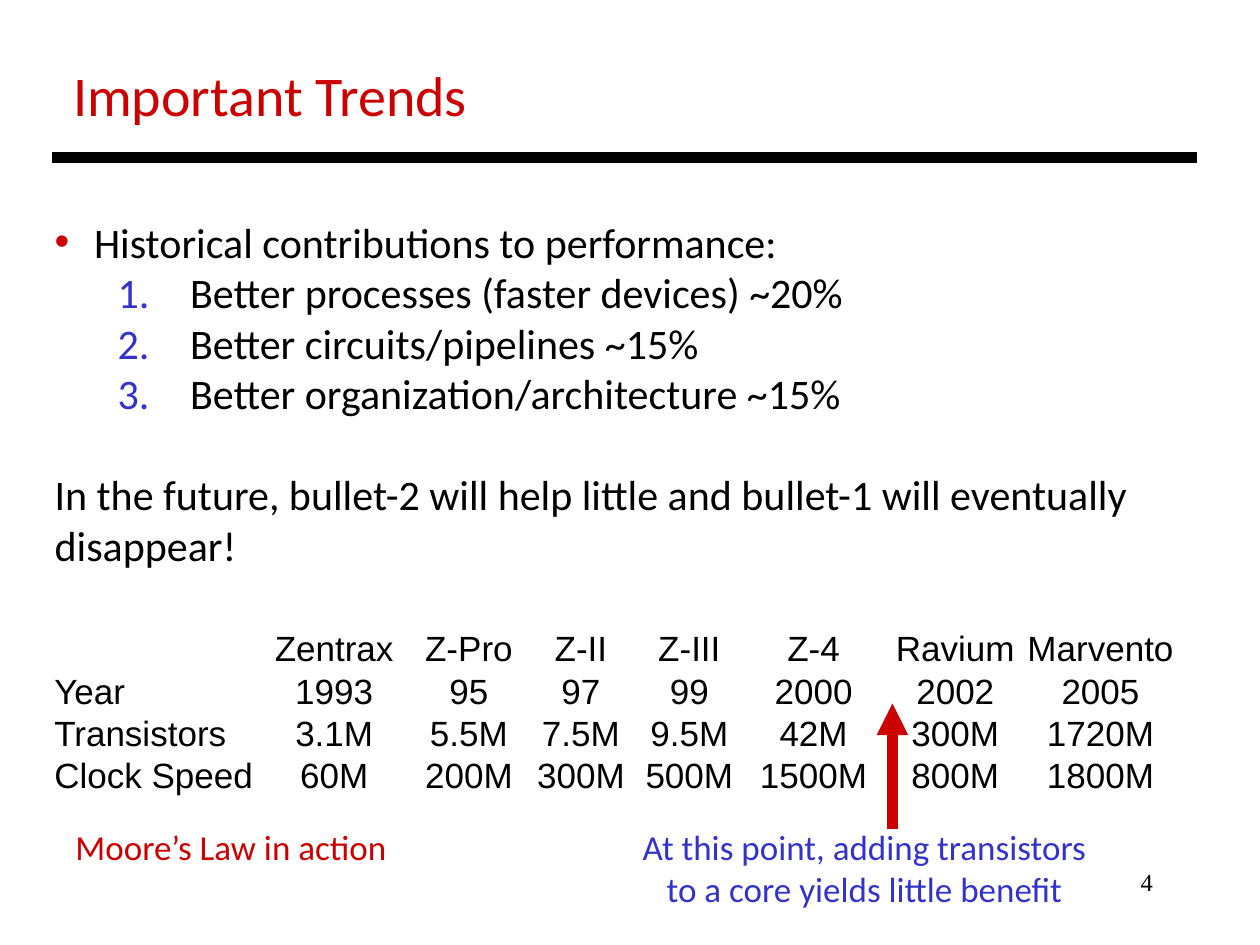
from itertools import pairwise

from lxml import etree
from pptx import Presentation
from pptx.dml.color import RGBColor
from pptx.enum.shapes import MSO_CONNECTOR
from pptx.enum.text import MSO_ANCHOR, MSO_AUTO_SIZE, PP_ALIGN
from pptx.oxml.ns import qn
from pptx.util import Pt

LEFT, CENTER, RIGHT = PP_ALIGN.LEFT, PP_ALIGN.CENTER, PP_ALIGN.RIGHT
TOP, STRAIGHT = MSO_ANCHOR.TOP, MSO_CONNECTOR.STRAIGHT
BLACK = RGBColor(0x00, 0x00, 0x00)
RED = RGBColor(0xCC, 0x00, 0x00)
BLUE = RGBColor(0x33, 0x33, 0xCC)

TITLE = "Important Trends"
HEADING = "Historical contributions to performance:"
CONTRIBUTIONS = [
    "Better processes (faster devices) ~20%",
    "Better circuits/pipelines ~15%",
    "Better organization/architecture ~15%",
]
OUTLOOK = ("In the future, bullet-2 will help little and bullet-1 "
           "will eventually disappear!")
PROCESSORS = [
    ["", "Zentrax", "Z-Pro", "Z-II", "Z-III", "Z-4", "Ravium", "Marvento"],
    ["Year", "1993", "95", "97", "99", "2000", "2002", "2005"],
    ["Transistors", "3.1M", "5.5M", "7.5M", "9.5M", "42M", "300M", "1720M"],
    ["Clock Speed", "60M", "200M", "300M", "500M", "1500M", "800M", "1800M"],
]
COLUMN_EDGES = [31, 146, 236, 300, 364, 424, 506, 586, 672]
TABLE_TOP, ROW_HEIGHT = 360, 24.2
# lines, box (left, top, width, height), format
CAPTIONS = [
    (["Moore’s Law in action"], (36, 468, 194, 32), dict(color=RED)),
    (["At this point, adding transistors", "to a core yields little benefit"],
     (352, 468, 284, 56), dict(color=BLUE, align=CENTER)),
    (["4"], (516, 492, 150, 36), dict(size=14, font="Times New Roman", align=RIGHT)),
]
# start, end, colour, arrowhead
LINES = [
    ((30, 90), (684, 90), BLACK, False),
    ((510, 474), (510, 402), RED, True),
]


def write(frame, lines, size=20, font="Calibri", color=BLACK, align=LEFT):
    frame.word_wrap = True
    frame.auto_size = MSO_AUTO_SIZE.NONE
    frame.vertical_anchor = TOP
    frame.text = "\n".join(lines)
    for paragraph in frame.paragraphs:
        paragraph.alignment = align
        paragraph.space_before = Pt(0)
        paragraph.font.size = Pt(size)
        paragraph.font.name = font
        paragraph.font.color.rgb = color


def place(shape, left, top, width, height):
    shape.left, shape.top = Pt(left), Pt(top)
    shape.width, shape.height = Pt(width), Pt(height)


def set_bullet(paragraph, margin, hanging, color=None, **mark):
    """Set the indent and a bullet: char="•", type="arabicPeriod" or none."""
    properties = paragraph._p.get_or_add_pPr()
    properties.set("marL", str(Pt(margin)))
    properties.set("indent", str(Pt(-hanging)))
    bullet = []
    if color is not None:
        bullet_color = etree.Element(qn("a:buClr"))
        etree.SubElement(bullet_color, qn("a:srgbClr"), val=str(color))
        bullet.append(bullet_color)
    tag = "a:buChar" if "char" in mark else "a:buAutoNum" if mark else "a:buNone"
    bullet.append(etree.Element(qn(tag), **mark))
    defaults = properties.find(qn("a:defRPr"))
    for element in bullet:
        defaults.addprevious(element)


def add_body(body):
    place(body, 24, 120, 664, 228)
    frame = body.text_frame
    write(frame, [HEADING, *CONTRIBUTIONS, OUTLOOK], size=24)
    heading, *contributions, outlook = frame.paragraphs
    set_bullet(heading, 22.5, 22.5, RED, char="•")
    for contribution in contributions:
        set_bullet(contribution, 77.4, 41.4, BLUE, type="arabicPeriod")
    set_bullet(outlook, 0, 0)
    outlook.space_before = Pt(29)


def add_processor_table(slide):
    rows, columns = len(PROCESSORS), len(PROCESSORS[0])
    table = slide.shapes.add_table(
        rows, columns, Pt(COLUMN_EDGES[0]), Pt(TABLE_TOP),
        Pt(COLUMN_EDGES[-1] - COLUMN_EDGES[0]), Pt(rows * ROW_HEIGHT)).table
    table.first_row = table.horz_banding = False
    for column, (start, end) in zip(table.columns, pairwise(COLUMN_EDGES)):
        column.width = Pt(end - start)
    for row, values in zip(table.rows, PROCESSORS):
        row.height = Pt(ROW_HEIGHT)
        for index, (cell, value) in enumerate(zip(row.cells, values)):
            cell.fill.background()
            cell.margin_left = cell.margin_right = 0
            cell.margin_top = cell.margin_bottom = 0
            write(cell.text_frame, [value], font="Arial",
                  align=CENTER if index else LEFT)


def add_line(slide, start, end, color, arrowhead):
    connector = slide.shapes.add_connector(
        STRAIGHT, *(Pt(value) for value in (*start, *end)))
    connector.line.color.rgb = color
    connector.line.width = Pt(6)
    if arrowhead:
        etree.SubElement(connector.line._get_or_add_ln(), qn("a:tailEnd"),
                         type="triangle")
    etree.SubElement(connector._element.spPr, qn("a:effectLst"))


def main():
    presentation = Presentation()
    presentation.slide_width, presentation.slide_height = Pt(720), Pt(540)
    slide = presentation.slides.add_slide(presentation.slide_layouts[1])
    title, body = slide.placeholders
    place(title, 34.6, 31, 600, 46)
    write(title.text_frame, [TITLE], size=32, color=RED)
    add_body(body)
    add_processor_table(slide)
    for line in LINES:
        add_line(slide, *line)
    for lines, box, text_format in CAPTIONS:
        caption = slide.shapes.add_textbox(*(Pt(value) for value in box))
        write(caption.text_frame, lines, **text_format)
    presentation.save("out.pptx")


if __name__ == "__main__":
    main()
